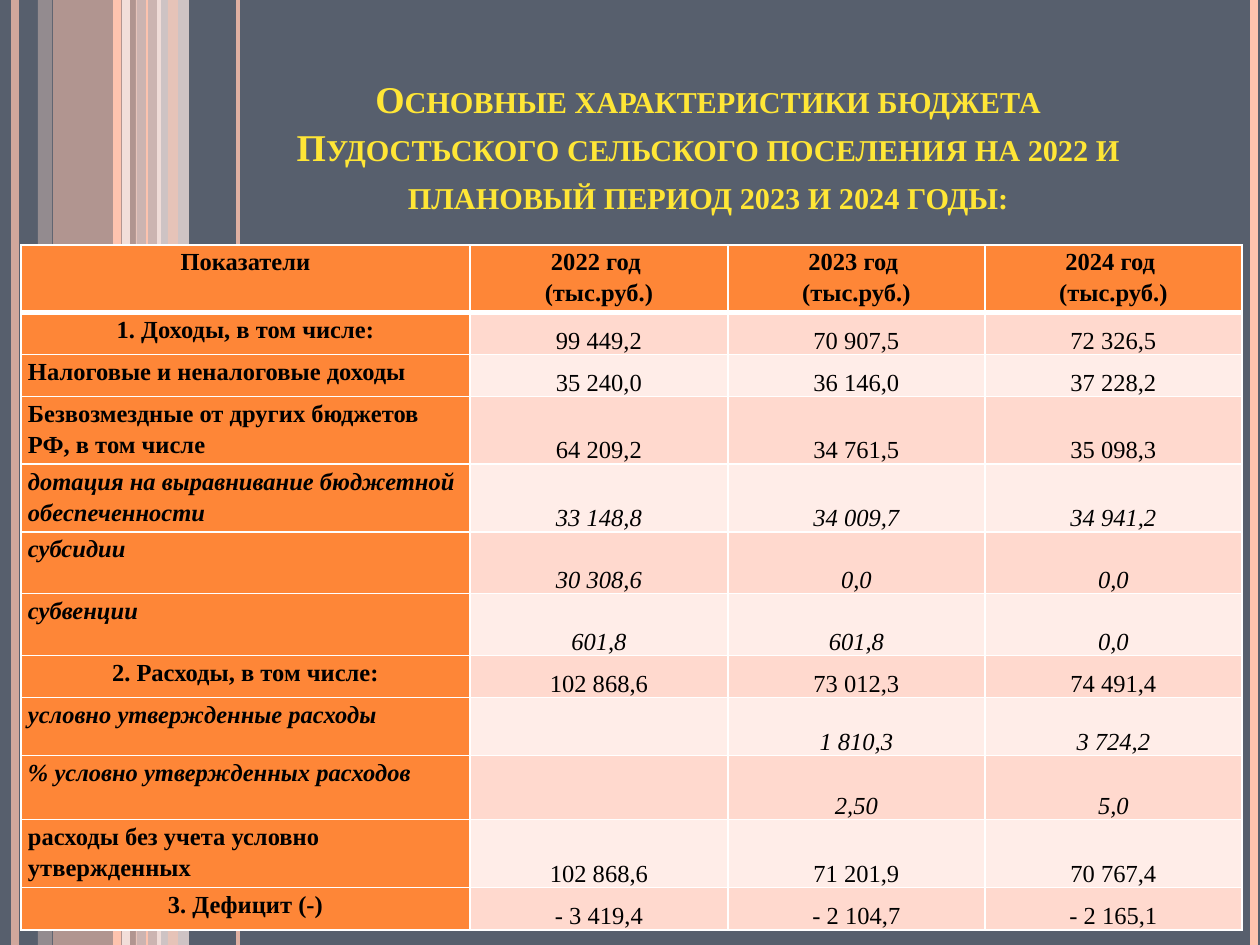
from lxml.etree import SubElement
from pptx import Presentation
from pptx.dml.color import RGBColor
from pptx.enum.shapes import MSO_CONNECTOR, MSO_SHAPE
from pptx.enum.text import MSO_ANCHOR, PP_ALIGN
from pptx.oxml.ns import qn
from pptx.util import Pt

SCALE = 914400 / 126
WIDTH, HEIGHT = 1260, 945
FONT = "Times New Roman"

SLATE = RGBColor(0x57, 0x5F, 0x6D)
ORANGE = RGBColor(0xFE, 0x86, 0x37)
SALMON = RGBColor(0xFE, 0xC3, 0xAE)
PEACH = RGBColor(0xFF, 0xD9, 0xCE)
BLUSH = RGBColor(0xFF, 0xED, 0xE8)
YELLOW = RGBColor(0xFF, 0xE6, 0x36)
WHITE = RGBColor(0xFF, 0xFF, 0xFF)
BLACK = RGBColor(0, 0, 0)

BANDS = [
    (53, 84, SALMON, 54),
    (38, 14, PEACH, 36),
    (136, 25, PEACH, 70),
    (157, 32, BLUSH, 71),
    (168, 10, SALMON, 51),
]
STRIPES = [
    (15, SALMON, 4.5, 73),
    (126, BLUSH, 4.5, 83),
    (117, SALMON, 4.5, 100),
    (238, SALMON, 2.25, 82),
    (147, SALMON, 0.75, 100),
    (1254, SALMON, 4.5, 100),
]
TITLE = (
    "Основные характеристики бюджета Пудостьского сельского поселения "
    "на 2022 и плановый период 2023 и 2024 годы:"
)
COLUMN_WIDTHS = [449, 258, 257, 257]
HEADER_HEIGHT = 62
YEARS = [2022, 2023, 2024]
ROWS = [
    (42, "1. Доходы, в том числе:", True, False, ["99 449,2", "70 907,5", "72 326,5"]),
    (42, "Налоговые и неналоговые доходы", False, False, ["35 240,0", "36 146,0", "37 228,2"]),
    (63, "Безвозмездные от других бюджетов РФ, в том числе", False, False,
     ["64 209,2", "34 761,5", "35 098,3"]),
    (64, "дотация на выравнивание бюджетной обеспеченности", False, True,
     ["33 148,8", "34 009,7", "34 941,2"]),
    (62, "субсидии", False, True, ["30 308,6", "0,0", "0,0"]),
    (62, "субвенции", False, True, ["601,8", "601,8", "0,0"]),
    (42, "2. Расходы, в том числе:", True, False, ["102 868,6", "73 012,3", "74 491,4"]),
    (58, "условно утвержденные расходы", False, True, ["", "1 810,3", "3 724,2"]),
    (64, "% условно утвержденных расходов", False, True, ["", "2,50", "5,0"]),
    (62, "расходы без учета условно утвержденных", False, False,
     ["102 868,6", "71 201,9", "70 767,4"]),
    (43, "3. Дефицит (-)", True, False, ["- 3 419,4", "- 2 104,7", "- 2 165,1"]),
]


def px(length):
    """Turn a length in px into EMU."""
    return round(length * SCALE)


def set_opacity(fill_parent, percent):
    """Give the solid fill under an element an opacity in percent."""
    color = fill_parent.find(qn("a:solidFill"))[0]
    SubElement(color, qn("a:alpha"), val=str(percent * 1000))


def add_band(slide, left, width, color, opacity):
    """Add a translucent vertical band as high as the slide."""
    shape = slide.shapes.add_shape(MSO_SHAPE.RECTANGLE, px(left), 0, px(width), px(HEIGHT))
    shape.shadow.inherit = False
    shape.fill.solid()
    shape.fill.fore_color.rgb = color
    shape.line.fill.background()
    set_opacity(shape.element.spPr, opacity)


def add_stripe(slide, left, color, weight, opacity):
    """Add a vertical line as high as the slide."""
    line = slide.shapes.add_connector(MSO_CONNECTOR.STRAIGHT, px(left), 0, px(left), px(HEIGHT))
    line.line.color.rgb = color
    line.line.width = Pt(weight)
    properties = line.element.spPr
    set_opacity(properties.find(qn("a:ln")), opacity)
    SubElement(properties, qn("a:effectLst"))


def add_run(paragraph, text, size, color, bold, italic=False):
    """Add one formatted run to a paragraph."""
    run = paragraph.add_run()
    run.text = text
    run.font.name = FONT
    run.font.size = Pt(size)
    run.font.color.rgb = color
    run.font.bold = bold
    run.font.italic = italic
    return run


def add_title(slide):
    """Add the centred small-caps title."""
    box = slide.shapes.add_textbox(px(243), px(149), px(930), px(74))
    frame = box.text_frame
    frame.word_wrap = True
    frame.vertical_anchor = MSO_ANCHOR.BOTTOM
    paragraph = frame.paragraphs[0]
    paragraph.alignment = PP_ALIGN.CENTER
    paragraph.line_spacing = 1.06
    run = add_run(paragraph, TITLE, 21.6, YELLOW, True)
    run.font._element.set("cap", "small")


def set_borders(cell, bottom_weight):
    """Draw white cell borders, with a weight of its own for the bottom one."""
    properties = cell._tc.get_or_add_tcPr()
    weights = {"a:lnL": 1, "a:lnR": 1, "a:lnT": 1, "a:lnB": bottom_weight}
    for position, (tag, weight) in enumerate(weights.items()):
        border = SubElement(properties, qn(tag), w=str(Pt(weight)))
        fill = SubElement(border, qn("a:solidFill"))
        SubElement(fill, qn("a:srgbClr"), val=str(WHITE))
        properties.insert(position, border)


def fill_cell(cell, lines, fill, bold=True, italic=False, centered=True,
              anchor=MSO_ANCHOR.TOP, bottom_weight=1):
    """Write lines of text into a cell and style it."""
    cell.fill.solid()
    cell.fill.fore_color.rgb = fill
    cell.margin_left = cell.margin_right = px(7)
    cell.margin_top = cell.margin_bottom = 0
    cell.vertical_anchor = anchor
    set_borders(cell, bottom_weight)
    frame = cell.text_frame
    for index, text in enumerate(lines):
        paragraph = frame.add_paragraph() if index else frame.paragraphs[0]
        paragraph.alignment = PP_ALIGN.CENTER if centered else PP_ALIGN.LEFT
        paragraph.line_spacing = 1.15
        if text:
            add_run(paragraph, text, 14, BLACK, bold, italic)


def add_budget_table(slide):
    """Add the table of budget figures by year."""
    heights = [HEADER_HEIGHT] + [row[0] for row in ROWS]
    table = slide.shapes.add_table(
        len(heights), len(COLUMN_WIDTHS), px(21), px(245),
        px(sum(COLUMN_WIDTHS)), px(sum(heights))).table
    for column, width in zip(table.columns, COLUMN_WIDTHS):
        column.width = px(width)
    for row, height in zip(table.rows, heights):
        row.height = px(height)
    fill_cell(table.cell(0, 0), ["Показатели"], ORANGE, bottom_weight=3)
    for column, year in enumerate(YEARS, 1):
        fill_cell(table.cell(0, column), [f"{year} год ", "(тыс.руб.)"], ORANGE, bottom_weight=3)
    for index, (_, label, centered, italic, values) in enumerate(ROWS, 1):
        fill_cell(table.cell(index, 0), [label], ORANGE, italic=italic, centered=centered)
        band = PEACH if index % 2 else BLUSH
        for column, value in enumerate(values, 1):
            fill_cell(table.cell(index, column), [value], band, bold=False,
                      italic=italic, anchor=MSO_ANCHOR.BOTTOM)


def main():
    """Build the budget slide and save it."""
    presentation = Presentation()
    presentation.slide_width = px(WIDTH)
    presentation.slide_height = px(HEIGHT)
    slide = presentation.slides.add_slide(presentation.slide_layouts[6])
    slide.background.fill.solid()
    slide.background.fill.fore_color.rgb = SLATE
    for band in BANDS:
        add_band(slide, *band)
    for stripe in STRIPES:
        add_stripe(slide, *stripe)
    add_title(slide)
    add_budget_table(slide)
    presentation.save("out.pptx")


if __name__ == "__main__":
    main()
